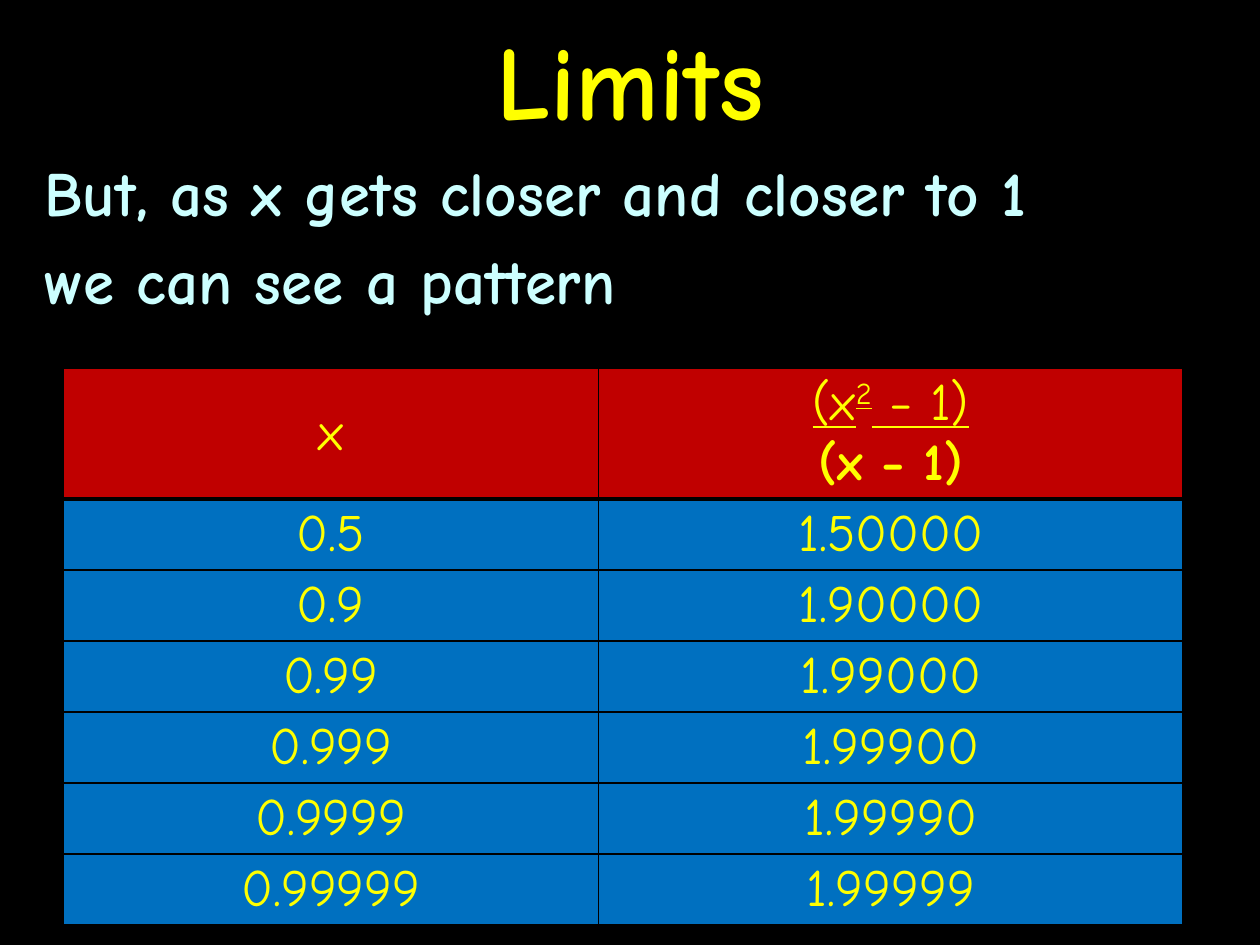
import pptx
import pptx.dml.color
import pptx.enum.text
import pptx.oxml
import pptx.oxml.ns
import pptx.util

Cm = pptx.util.Cm
Pt = pptx.util.Pt
CENTER = pptx.enum.text.PP_ALIGN.CENTER
MIDDLE = pptx.enum.text.MSO_ANCHOR.MIDDLE

FONT = "Comic Neue"
COLOURS = {
    "background": "000000",
    "border": "000000",
    "yellow": "FFFF00",
    "body": "CCFFFF",
    "header": "C00000",
    "row": "0070C0",
}
VALUES = [
    ("0.5", "1.50000"),
    ("0.9", "1.90000"),
    ("0.99", "1.99000"),
    ("0.999", "1.99900"),
    ("0.9999", "1.99990"),
    ("0.99999", "1.99999"),
]


def colour(name):
    return pptx.dml.color.RGBColor.from_string(COLOURS[name])


def format_run(run, size, colour_name, bold=False):
    run.font.name = FONT
    run.font.size = Pt(size)
    run.font.bold = bold
    run.font.color.rgb = colour(colour_name)


def fill_placeholder(shape, box, text, size, colour_name):
    shape.left, shape.top, shape.width, shape.height = map(Cm, box)
    frame = shape.text_frame
    frame.auto_size = pptx.enum.text.MSO_AUTO_SIZE.NONE
    frame.text = text
    for paragraph in frame.paragraphs:
        for run in paragraph.runs:
            format_run(run, size, colour_name, bold=True)


def remove_bullet(paragraph):
    properties = paragraph._p.get_or_add_pPr()
    properties.set("marL", "0")
    properties.set("indent", "0")
    properties.append(pptx.oxml.parse_xml(
        f'<a:buNone {pptx.oxml.ns.nsdecls("a")}/>'))


def set_borders(cell, bottom_width):
    """Insert the four edges ahead of the cell fill, as the schema requires."""
    properties = cell._tc.get_or_add_tcPr()
    widths = {"lnL": 1, "lnR": 1, "lnT": 1, "lnB": bottom_width}
    for position, (edge, width) in enumerate(widths.items()):
        properties.insert(position, pptx.oxml.parse_xml(
            f'<a:{edge} {pptx.oxml.ns.nsdecls("a")} w="{Pt(width)}">'
            f'<a:solidFill><a:srgbClr val="{COLOURS["border"]}"/></a:solidFill>'
            f'</a:{edge}>'))


def fill_cell(cell, text, fill_name, bottom_width=1):
    cell.text_frame.text = text
    cell.vertical_anchor = MIDDLE
    cell.margin_left = cell.margin_right = Cm(0.1)
    cell.margin_top = cell.margin_bottom = Cm(0.1)
    cell.fill.solid()
    cell.fill.fore_color.rgb = colour(fill_name)
    set_borders(cell, bottom_width)
    for paragraph in cell.text_frame.paragraphs:
        paragraph.alignment = CENTER
        for run in paragraph.runs:
            format_run(run, 30, "yellow")


def fill_fraction(cell):
    """Underlined numerator with a raised exponent, over a bold denominator."""
    fill_cell(cell, "(x\n(x − 1)", "header", bottom_width=3)
    numerator, denominator = cell.text_frame.paragraphs
    denominator.runs[0].font.bold = True
    for text in ("2", " − 1)"):
        run = numerator.add_run()
        run.text = text
        format_run(run, 30, "yellow")
    for run in numerator.runs:
        run.font.underline = True
    exponent = numerator.runs[1]
    exponent.font._element.set("baseline", "30000")


def add_limit_table(slide):
    header_height, row_height = 2.64, 1.43
    widths = (10.8, 11.78)
    height = header_height + row_height * len(VALUES)
    table = slide.shapes.add_table(
        len(VALUES) + 1, len(widths),
        Cm(1.27), Cm(7.42), Cm(sum(widths)), Cm(height)).table
    for column, width in zip(table.columns, widths):
        column.width = Cm(width)
    for row in table.rows:
        row.height = Cm(row_height)
    table.rows[0].height = Cm(header_height)

    fill_cell(table.cell(0, 0), "x", "header", bottom_width=3)
    fill_fraction(table.cell(0, 1))
    for row_index, values in enumerate(VALUES, start=1):
        for column_index, value in enumerate(values):
            fill_cell(table.cell(row_index, column_index), value, "row")


def main():
    presentation = pptx.Presentation()
    presentation.slide_width = Cm(25.4)
    presentation.slide_height = Cm(19.05)
    slide = presentation.slides.add_slide(presentation.slide_layouts[1])
    slide.background.fill.solid()
    slide.background.fill.fore_color.rgb = colour("background")

    # Title
    title = slide.shapes.title
    fill_placeholder(title, (0, 0, 25.4, 3.18), "Limits", 60, "yellow")
    title.text_frame.vertical_anchor = MIDDLE
    title.text_frame.paragraphs[0].alignment = CENTER

    # Statement
    body = slide.placeholders[1]
    fill_placeholder(
        body, (0.64, 2.97, 24.13, 15.67),
        "But, as x gets closer and closer to 1\nwe can see a pattern",
        36, "body")
    for paragraph in body.text_frame.paragraphs:
        remove_bullet(paragraph)

    # Values approaching the limit
    add_limit_table(slide)

    presentation.save("out.pptx")


if __name__ == "__main__":
    main()
